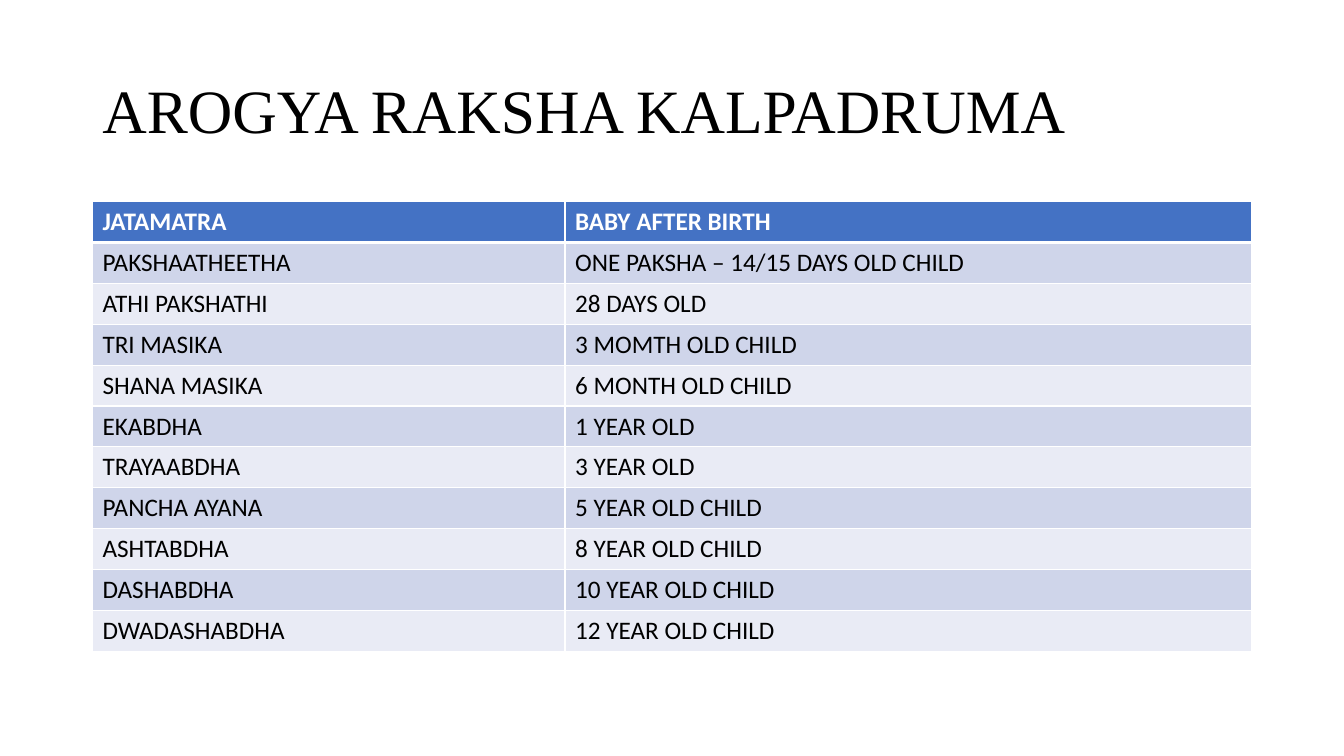
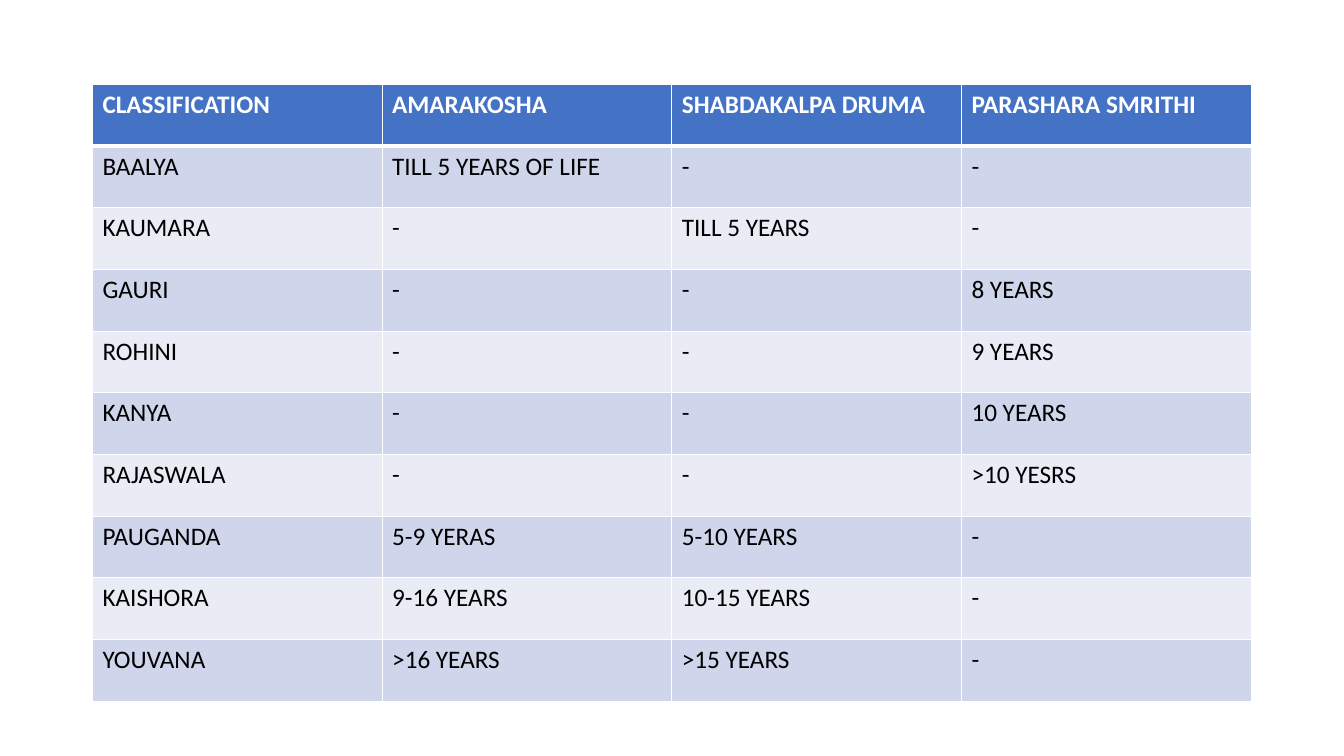
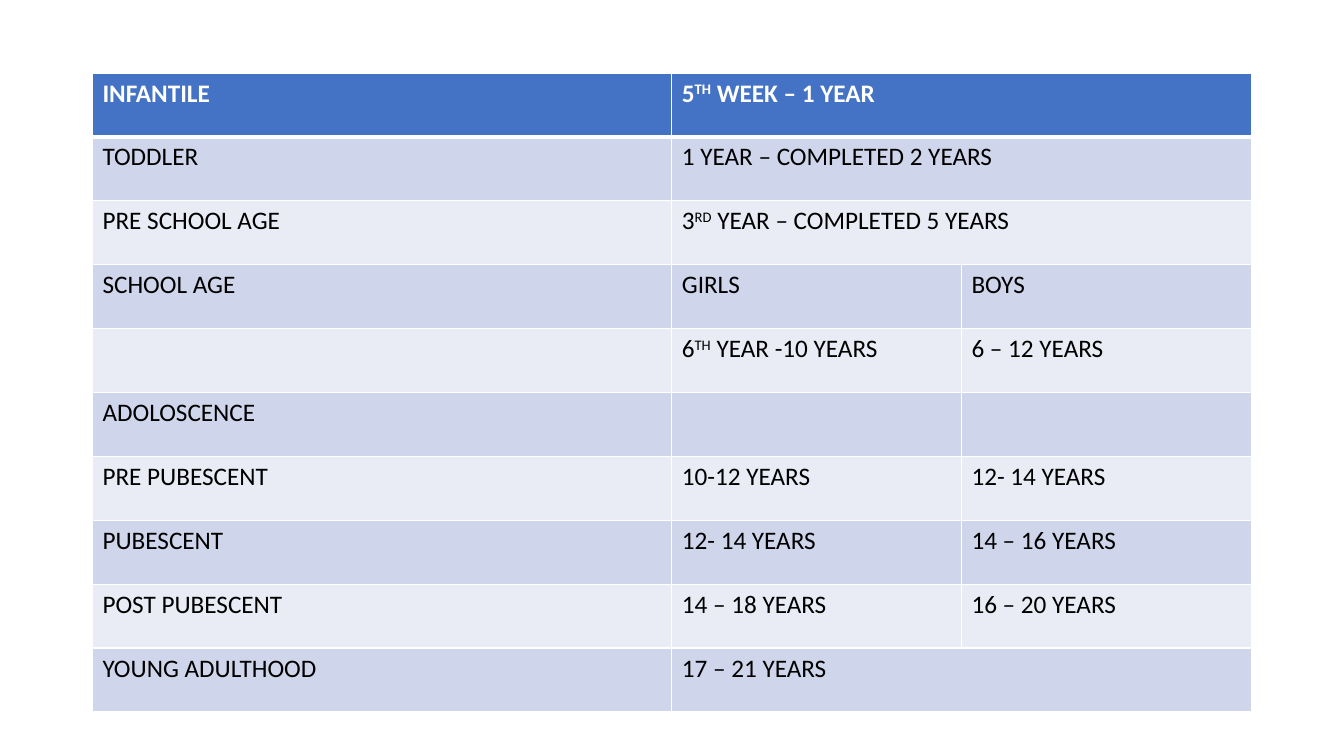
from dataclasses import dataclass

from lxml.etree import SubElement
from pptx import Presentation
from pptx.dml.color import RGBColor
from pptx.enum.text import MSO_ANCHOR
from pptx.oxml.ns import qn
from pptx.util import Cm, Pt


@dataclass(frozen=True)
class Theme:
    ink: RGBColor = RGBColor.from_string("000000")
    paper: RGBColor = RGBColor.from_string("FFFFFF")
    header: RGBColor = RGBColor.from_string("4472C4")
    bands: tuple = (RGBColor.from_string("E9EBF5"), RGBColor.from_string("CFD5EA"))
    title_font: str = "Times New Roman"
    body_font: str = "Calibri"
    title_size: Pt = Pt(44)
    body_size: Pt = Pt(18)
    grid_line: Pt = Pt(1)
    header_line: Pt = Pt(3)


THEME = Theme()
LEFT, WIDTH = Cm(2.33), Cm(29.21)

# Text between carets is superscript; None continues the cell to its left.
SLIDES = [
    {
        "title": "AROGYA RAKSHA KALPADRUMA",
        "top": 5.08, "height": 11.33, "columns": [11.91, 17.3],
        "rows": [
            ("JATAMATRA", "BABY AFTER BIRTH"),
            ("PAKSHAATHEETHA", "ONE PAKSHA – 14/15 DAYS OLD CHILD"),
            ("ATHI PAKSHATHI", "28 DAYS OLD"),
            ("TRI MASIKA", "3 MOMTH OLD CHILD"),
            ("SHANA MASIKA", "6 MONTH OLD CHILD"),
            ("EKABDHA", "1 YEAR OLD"),
            ("TRAYAABDHA", "3 YEAR OLD"),
            ("PANCHA AYANA", "5 YEAR OLD CHILD"),
            ("ASHTABDHA", "8 YEAR OLD CHILD"),
            ("DASHABDHA", "10 YEAR OLD CHILD"),
            ("DWADASHABDHA", "12 YEAR OLD CHILD"),
        ],
    },
    {
        "top": 2.13, "height": 15.54, "columns": [7.3] * 4,
        "rows": [
            ("CLASSIFICATION", "AMARAKOSHA", "SHABDAKALPA DRUMA", "PARASHARA SMRITHI"),
            ("BAALYA", "TILL 5 YEARS OF LIFE", "-", "-"),
            ("KAUMARA", "-", "TILL 5 YEARS", "-"),
            ("GAURI", "-", "-", "8 YEARS"),
            ("ROHINI", "-", "-", "9 YEARS"),
            ("KANYA", "-", "-", "10 YEARS"),
            ("RAJASWALA", "-", "-", ">10 YESRS"),
            ("PAUGANDA", "5-9 YERAS", "5-10 YEARS", "-"),
            ("KAISHORA", "9-16 YEARS", "10-15 YEARS", "-"),
            ("YOUVANA", ">16 YEARS", ">15 YEARS", "-"),
        ],
    },
    {
        "top": 1.84, "height": 16.1, "columns": [14.6, 7.3, 7.3],
        "rows": [
            ("INFANTILE", "5^TH^ WEEK – 1 YEAR", None),
            ("TODDLER", "1 YEAR – COMPLETED 2 YEARS", None),
            ("PRE SCHOOL AGE", "3^RD^ YEAR – COMPLETED 5 YEARS", None),
            ("SCHOOL AGE", "GIRLS", "BOYS"),
            ("", "6^TH^ YEAR -10 YEARS", "6 – 12 YEARS"),
            ("ADOLOSCENCE", "", ""),
            ("PRE PUBESCENT", "10-12 YEARS", "12- 14 YEARS"),
            ("PUBESCENT", "12- 14 YEARS", "14 – 16 YEARS"),
            ("POST PUBESCENT", "14 – 18 YEARS", "16 – 20 YEARS"),
            ("YOUNG ADULTHOOD", "17 – 21 YEARS", None),
        ],
    },
]


def add_run(paragraph, text, font, size, color, bold=False):
    run = paragraph.add_run()
    run.text = text
    run.font.name, run.font.size, run.font.bold = font, size, bold
    run.font.color.rgb = color
    return run


def set_borders(cell, row_index):
    """Draw the white grid, with a heavier line under the header row."""
    tc_pr = cell._tc.get_or_add_tcPr()
    heavy_side = {0: "lnB", 1: "lnT"}.get(row_index)
    for side in ("lnL", "lnR", "lnT", "lnB"):
        weight = THEME.header_line if side == heavy_side else THEME.grid_line
        line = SubElement(tc_pr, qn(f"a:{side}"), w=str(int(weight)))
        fill = SubElement(line, qn("a:solidFill"))
        SubElement(fill, qn("a:srgbClr"), val=str(THEME.paper))


prs = Presentation()
prs.slide_width, prs.slide_height = Cm(33.87), Cm(19.05)

for content in SLIDES:
    slide = prs.slides.add_slide(prs.slide_layouts[6])

    if "title" in content:
        title = slide.shapes.add_textbox(LEFT, Cm(1.01), WIDTH, Cm(3.68)).text_frame
        title.word_wrap = True
        title.vertical_anchor = MSO_ANCHOR.MIDDLE
        title.paragraphs[0].line_spacing = 0.9
        add_run(title.paragraphs[0], content["title"],
                THEME.title_font, THEME.title_size, THEME.ink)

    rows, columns = content["rows"], content["columns"]
    table = slide.shapes.add_table(len(rows), len(columns), LEFT, Cm(content["top"]),
                                   WIDTH, Cm(content["height"])).table
    for column, width in zip(table.columns, columns):
        column.width = Cm(width)

    for r, row in enumerate(rows):
        is_header = r == 0
        for c, text in enumerate(row):
            cell = table.cell(r, c)
            set_borders(cell, r)
            cell.fill.solid()
            cell.fill.fore_color.rgb = THEME.header if is_header else THEME.bands[r % 2]
            if text is None:
                table.cell(r, c - 1).merge(cell)
                continue
            for part, piece in enumerate(text.split("^")):
                if not piece:
                    continue
                run = add_run(cell.text_frame.paragraphs[0], piece,
                              THEME.body_font, THEME.body_size,
                              THEME.paper if is_header else THEME.ink, is_header)
                if part % 2:
                    run._r.get_or_add_rPr().set("baseline", "30000")

prs.save("out.pptx")
